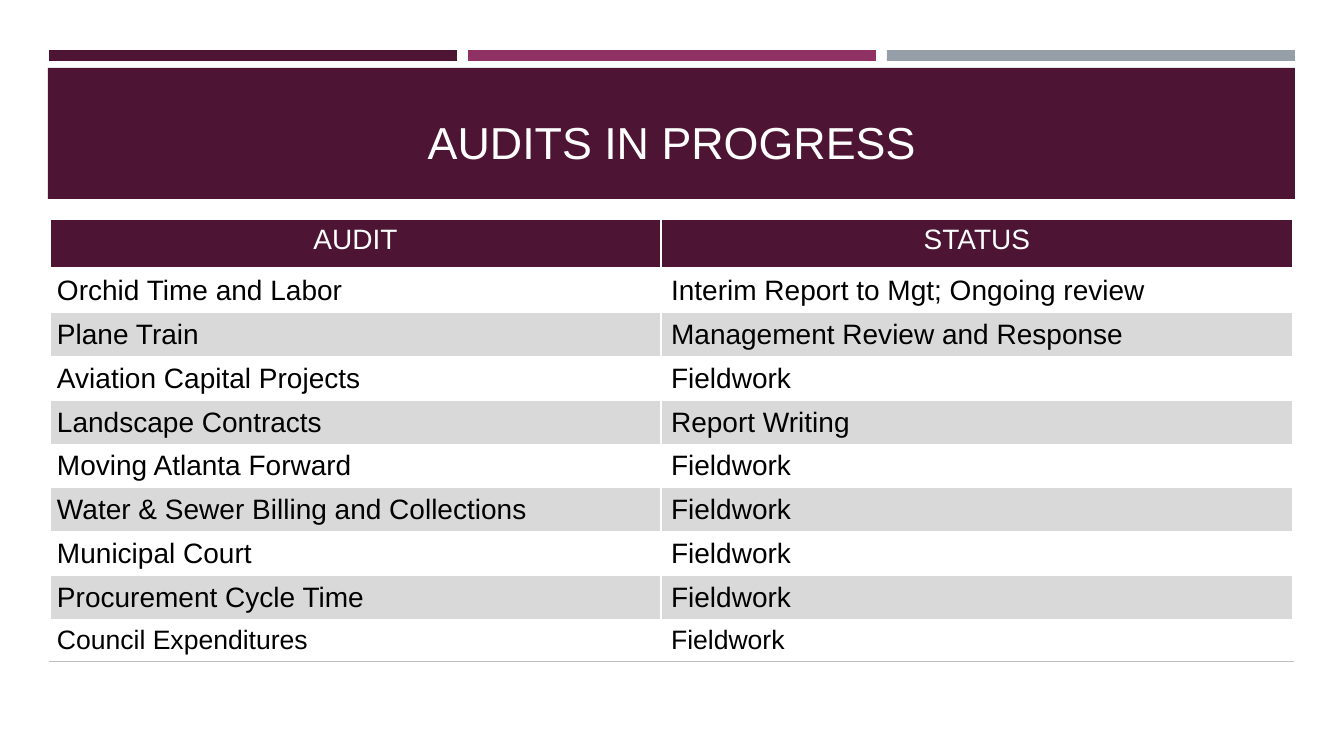
import pptx
import pptx.util
import pptx.dml.color
import pptx.enum.shapes
import pptx.enum.text
import pptx.oxml
import pptx.oxml.ns
from lxml import etree

TITLE = "AUDITS IN PROGRESS"
HEADINGS = ("AUDIT", "STATUS")
AUDITS = [
    ("Orchid Time and Labor", "Interim Report to Mgt; Ongoing review"),
    ("Plane Train", "Management Review and Response"),
    ("Aviation Capital Projects", "Fieldwork"),
    ("Landscape Contracts", "Report Writing"),
    ("Moving Atlanta Forward", "Fieldwork"),
    ("Water & Sewer Billing and Collections", "Fieldwork"),
    ("Municipal Court", "Fieldwork"),
    ("Procurement Cycle Time", "Fieldwork"),
    ("Council Expenditures", "Fieldwork"),
]
ROWS = [HEADINGS, *AUDITS, ("", "")]
ROW_HEIGHTS = (50, 42, 42, 44, 42, 42, 43, 44, 42, 25, 25)
COLUMN_WIDTHS = (611, 632)
THEME = {
    "font": "Arial",
    "title_size": 32,
    "table_size": 20,
    "last_size": 19,
    "plum": "4D1434",
    "magenta": "903163",
    "gray": "969FA7",
    "band": "D9D9D9",
    "rule": "BFBFBF",
    "white": "FFFFFF",
    "black": "000000",
}
BAR_COLORS = ("plum", "magenta", "gray")
BAR_LEFT, BAR_TOP, BAR_WIDTH, BAR_HEIGHT, BAR_PITCH = 49, 50, 408, 11, 419
SCALE = 914400 / 100.8

ALIGN = pptx.enum.text.PP_ALIGN
ANCHOR = pptx.enum.text.MSO_ANCHOR


def px(length):
    return pptx.util.Emu(round(length * SCALE))


def color(name):
    return pptx.dml.color.RGBColor.from_string(THEME[name])


def write_text(frame, text, size, ink, align=ALIGN.LEFT, before=0):
    paragraph = frame.paragraphs[0]
    paragraph.alignment = align
    paragraph.space_before = pptx.util.Pt(before)
    run = paragraph.add_run()
    run.text = text
    run.font.name = THEME["font"]
    run.font.size = pptx.util.Pt(THEME[size])
    run.font.color.rgb = color(ink)


def add_bar(slide, left, top, width, height, fill):
    shape = slide.shapes.add_shape(
        pptx.enum.shapes.MSO_SHAPE.RECTANGLE, px(left), px(top), px(width), px(height)
    )
    shape.shadow.inherit = False
    shape.fill.solid()
    shape.fill.fore_color.rgb = color(fill)
    shape.line.fill.background()


def set_border(cell, side, ink, points):
    properties = cell._tc.get_or_add_tcPr()
    line = etree.SubElement(properties, pptx.oxml.ns.qn("a:ln" + side))
    line.set("w", str(pptx.util.Pt(points)))
    fill = etree.SubElement(line, pptx.oxml.ns.qn("a:solidFill"))
    etree.SubElement(fill, pptx.oxml.ns.qn("a:srgbClr")).set("val", THEME[ink])


def edge_style(edge):
    if edge == 1:
        return "white", 3
    if edge == len(ROWS) - 1:
        return "rule", 1
    return "white", 1


def format_cell(cell, text, row, column):
    header = row == 0
    last_audit = row == len(AUDITS)
    set_border(cell, "L", "white", 1)
    set_border(cell, "R", "white", 1)
    set_border(cell, "T", *edge_style(row))
    set_border(cell, "B", *edge_style(row + 1))
    cell.fill.solid()
    banded = row % 2 == 0 and row < len(AUDITS)
    cell.fill.fore_color.rgb = color("plum" if header else "band" if banded else "white")
    if not text:
        return
    if header:
        write_text(cell.text_frame, text, "table_size", "white", align=ALIGN.CENTER, before=6)
        return
    cell.vertical_anchor = ANCHOR.MIDDLE
    if column == 0:
        cell.margin_left = cell.margin_right = px(7)
        cell.margin_top = cell.margin_bottom = 0
    write_text(cell.text_frame, text, "last_size" if last_audit else "table_size", "black")


def add_title(slide):
    add_bar(slide, 48, 68, 1247, 131, "plum")
    box = slide.shapes.add_textbox(px(67), px(93), px(1210), px(80))
    box.text_frame.word_wrap = True
    box.text_frame.vertical_anchor = ANCHOR.BOTTOM
    write_text(box.text_frame, TITLE, "title_size", "white", align=ALIGN.CENTER)


def add_audit_table(slide):
    table = slide.shapes.add_table(
        len(ROWS), len(COLUMN_WIDTHS), px(50), px(219),
        px(sum(COLUMN_WIDTHS)), px(sum(ROW_HEIGHTS)),
    ).table
    table.horz_banding = False
    table.first_row = False
    for column, width in zip(table.columns, COLUMN_WIDTHS):
        column.width = px(width)
    for row, height in zip(table.rows, ROW_HEIGHTS):
        row.height = px(height)
    for row, texts in enumerate(ROWS):
        for column, text in enumerate(texts):
            format_cell(table.cell(row, column), text, row, column)


def main():
    presentation = pptx.Presentation()
    presentation.slide_width = px(1344)
    presentation.slide_height = px(756)
    slide = presentation.slides.add_slide(presentation.slide_layouts[6])
    for index, fill in enumerate(BAR_COLORS):
        add_bar(slide, BAR_LEFT + index * BAR_PITCH, BAR_TOP, BAR_WIDTH, BAR_HEIGHT, fill)
    add_title(slide)
    add_audit_table(slide)
    presentation.save("out.pptx")


if __name__ == "__main__":
    main()
